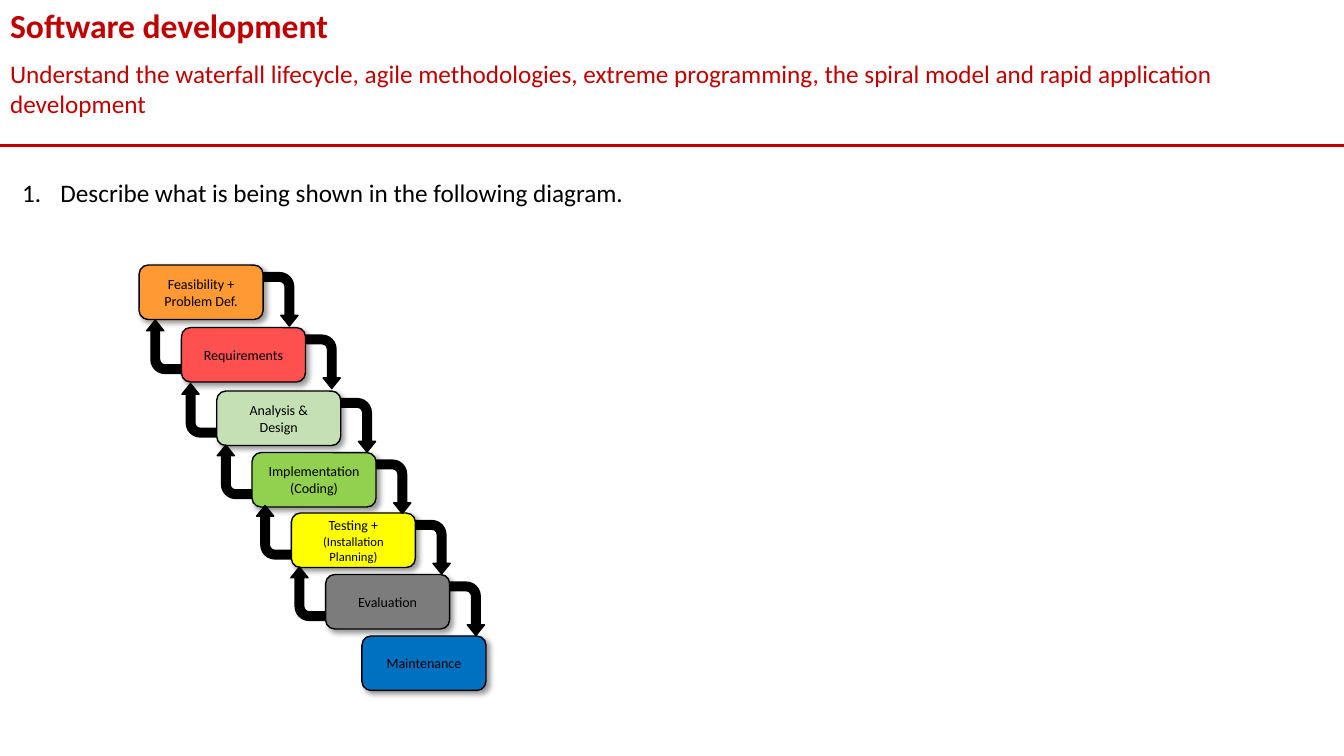
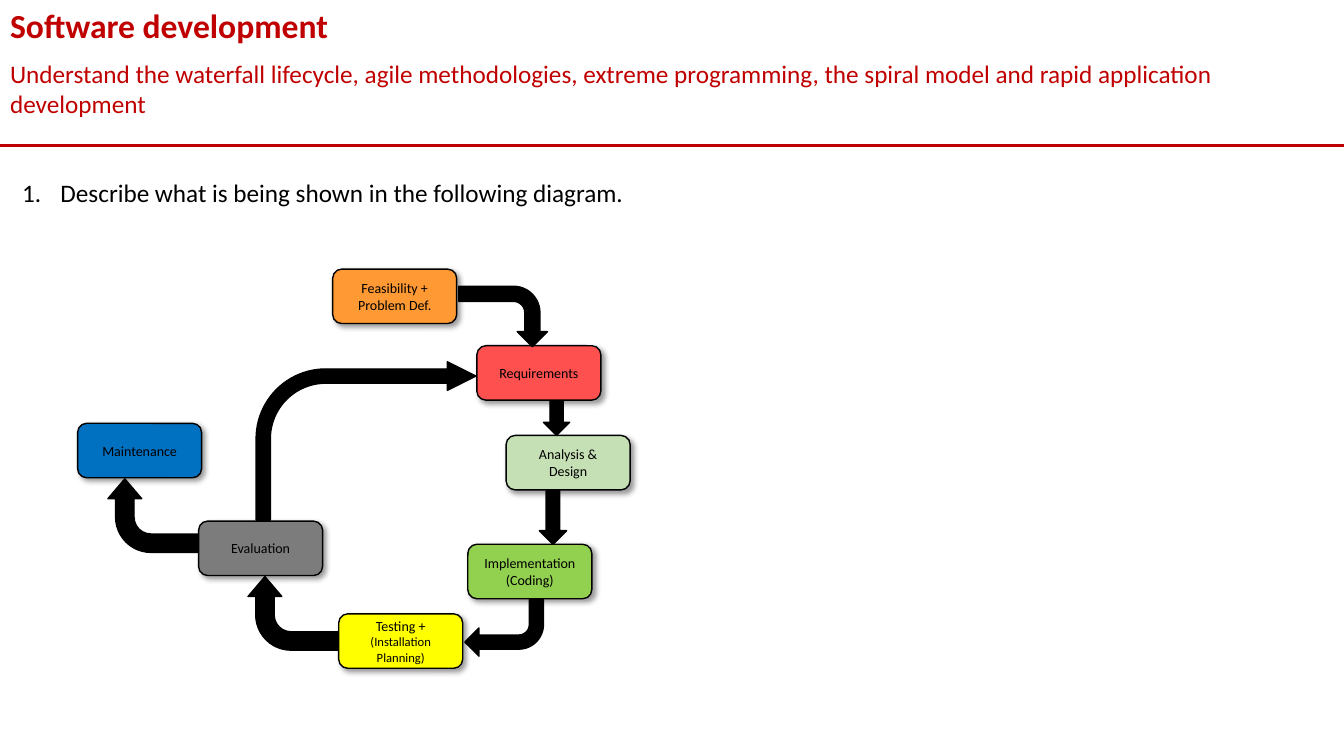
from dataclasses import dataclass
from lxml import etree
from pptx import Presentation
from pptx.dml.color import RGBColor
from pptx.enum import shapes, text
from pptx.oxml import ns
from pptx.util import Inches, Pt


@dataclass
class Theme:
    font: str = "Calibri"
    red: str = "C00000"
    black: str = "000000"
    title: int = 24
    body: int = 18
    label: int = 10
    small: int = 9


theme = Theme()
kinds = shapes.MSO_SHAPE
HEAD = "Software development"
GOAL = ("Understand the waterfall lifecycle, agile methodologies, extreme programming, "
        "the spiral model and rapid application development")
TASK = "Describe what is being shown in the following diagram."
STAGES = [
    ("Feasibility + Problem Def.", "FF9933"),
    ("Requirements", "FF5050"),
    ("Analysis & Design", "C5E0B4"),
    ("Implementation (Coding)", "92D050"),
    ("Testing +\n(Installation Planning)", "FFFF00"),
    ("Evaluation", "7C7C7C"),
    ("Maintenance", "0070C0"),
]
FALL = [(1.38, 2.63), (1.8, 3.25), (2.15, 3.88), (2.5, 4.49),
        (2.89, 5.09), (3.23, 5.7), (3.59, 6.31)]
CYCLE = [(3.3, 2.67), (4.73, 3.43), (5.02, 4.32), (4.64, 5.4),
         (3.36, 6.09), (1.97, 5.17), (0.77, 4.2)]
STEP = (0.25, 0.25, 0.31, 0.41)
CURVE = (0.25, 0.23, 0.27, 0.48)
SWEEP = (0.09, 0.09, 0.18, 0.44)


def style(par, size, color, bold=False):
    for run in par.runs:
        run.font.name = theme.font
        run.font.size = Pt(size)
        run.font.bold = bold
        run.font.color.rgb = RGBColor.from_string(color)


def draw(group, kind, spot, fill, turn=0, bends=()):
    shape = group.shapes.add_shape(kind, *map(Inches, spot))
    shape.shadow.inherit = False
    shape.fill.solid()
    shape.fill.fore_color.rgb = RGBColor.from_string(fill)
    shape.line.color.rgb = RGBColor.from_string(theme.black)
    shape.line.width = Pt(1)
    shape.rotation = turn
    for i, bend in enumerate(bends):
        shape.adjustments[i] = bend
    return shape


deck = Presentation()
deck.slide_width, deck.slide_height = Inches(13.33), Inches(7.5)
layout = deck.slide_layouts[3]
spots = {0: (0, 0, 13.33, 0.5), 1: (0, 0.53, 13.33, 0.71), 2: (0.12, 1.71, 13.07, 0.4)}
for holder in layout.placeholders:
    idx = holder.placeholder_format.idx
    if idx in spots:
        holder.left, holder.top, holder.width, holder.height = map(Inches, spots[idx])

steps, loop = [], []
for x, y in FALL[:-1]:
    steps.append((kinds.BENT_ARROW, (x + 1.14, y + 0.17, 0.53, 0.34), 90, STEP))
for x, y in FALL[1:-1]:
    steps.append((kinds.BENT_ARROW, (x - 0.44, y + 0.02, 0.53, 0.34), 270, STEP))
loop = [
    (kinds.BENT_ARROW, (4.69, 2.7, 0.6, 0.88), 90, ()),
    (kinds.DOWN_ARROW, (5.39, 3.98, 0.26, 0.34), 0, ()),
    (kinds.DOWN_ARROW, (5.35, 4.87, 0.27, 0.53), 0, ()),
    (kinds.BENT_ARROW, (4.61, 5.95, 0.78, 0.56), 180, ()),
    (kinds.BENT_ARROW, (2.54, 5.64, 0.73, 0.89), 270, CURVE),
    (kinds.BENT_ARROW, (2.54, 3.59, 2.18, 1.57), 0, SWEEP),
    (kinds.BENT_ARROW, (1.15, 4.67, 0.73, 0.89), 270, CURVE),
]

for boxes, arrows in ((FALL, steps), (CYCLE, loop)):
    slide = deck.slides.add_slide(layout)
    heads = ((HEAD, theme.title, theme.red), (GOAL, theme.body, theme.red),
             (TASK, theme.body, theme.black))
    for idx, (words, size, color) in enumerate(heads):
        frame = slide.placeholders[idx].text_frame
        frame.text = words
        frame.auto_size = text.MSO_AUTO_SIZE.NONE
        frame.vertical_anchor = text.MSO_ANCHOR.TOP
        par = frame.paragraphs[0]
        par.alignment = text.PP_ALIGN.LEFT
        par.space_before = Pt(0)
        style(par, size, color, idx == 0)
        if idx:
            props = par._p.get_or_add_pPr()
            dent = Inches(0.38) if idx == 2 else 0
            props.set("marL", str(dent))
            props.set("indent", str(-dent))
            if idx == 2:
                etree.SubElement(props, ns.qn("a:buFont"), typeface="+mj-lt")
                etree.SubElement(props, ns.qn("a:buAutoNum"), type="arabicPeriod")
            else:
                etree.SubElement(props, ns.qn("a:buNone"))

    group = slide.shapes.add_group_shape()
    for (x, y), (words, fill) in zip(boxes, STAGES):
        box = draw(group, kinds.ROUNDED_RECTANGLE, (x, y, 1.23, 0.54), fill)
        glow = box.element.spPr.find(ns.qn("a:effectLst"))
        shade = etree.SubElement(glow, ns.qn("a:outerShdw"), blurRad=str(Pt(4)),
                                 dist=str(Pt(3)), dir="2700000", algn="tl", rotWithShape="0")
        tint = etree.SubElement(shade, ns.qn("a:srgbClr"), val=theme.black)
        etree.SubElement(tint, ns.qn("a:alpha"), val="40000")
        box.text_frame.text = words
        box.text_frame.word_wrap = True
        box.text_frame.vertical_anchor = text.MSO_ANCHOR.MIDDLE
        for i, par in enumerate(box.text_frame.paragraphs):
            par.alignment = text.PP_ALIGN.CENTER
            style(par, theme.small if i else theme.label, theme.black)
    for kind, spot, turn, bends in arrows:
        draw(group, kind, spot, theme.black, turn, bends)

rule = slide.shapes.add_connector(shapes.MSO_CONNECTOR.STRAIGHT, 0, Inches(1.44),
                                  deck.slide_width, Inches(1.44))
rule.line.color.rgb = RGBColor.from_string(theme.red)
rule.line.width = Pt(2.25)
etree.SubElement(rule.element.spPr, ns.qn("a:effectLst"))
layout.shapes.element.append(rule.element)

deck.save("out.pptx")
